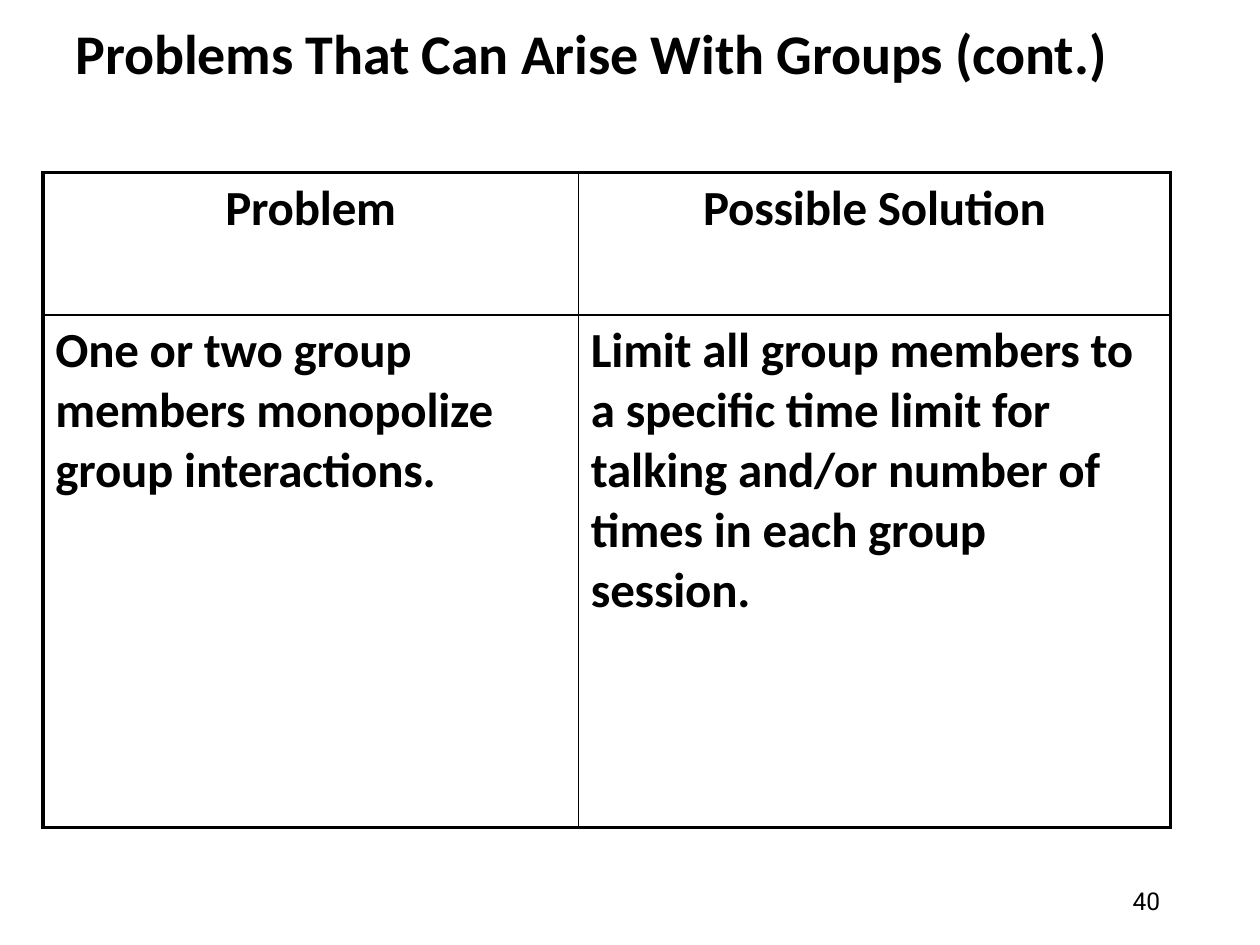
from dataclasses import dataclass

from lxml import etree
from pptx import Presentation
from pptx.dml.color import RGBColor
from pptx.enum import text
from pptx.oxml import ns
from pptx.util import Inches, Pt

COLORS = {"ink": "000000", "paper": "FFFFFF"}
THICK, THIN = 2.25, 1
COLUMN_WIDTHS = (4.25, 4.7)
ROW_HEIGHTS = (1.13, 4.07)


@dataclass
class Style:
    size: float
    font: str = "Calibri"
    bold: bool = True
    tracking: float = 0


@dataclass
class CellText:
    lines: tuple[str, ...]
    centered: bool = False


TITLE = Style(32, tracking=-0.1)
BODY = Style(28, tracking=-0.1)
NUMBER = Style(14, "Roboto", False)

ROWS = (
    (CellText(("Problem",), True), CellText(("Possible Solution",), True)),
    (
        CellText(("One or two group", "members monopolize", "group interactions.")),
        CellText((
            "Limit all group members to",
            "a specific time limit for",
            "talking and/or number of",
            "times in each group",
            "session.",
        )),
    ),
)


def add_run(paragraph, wording: str, style: Style) -> None:
    run = paragraph.add_run()
    run.text = wording
    run.font.size = Pt(style.size)
    run.font.name = style.font
    run.font.bold = style.bold
    run.font.color.rgb = RGBColor.from_string(COLORS["ink"])
    if style.tracking:
        run.font._element.set("spc", str(round(style.tracking * 100)))


def add_label(slide, wording: str, left: float, top: float, width: float,
              height: float, style: Style) -> None:
    shape = slide.shapes.add_textbox(
        Inches(left), Inches(top), Inches(width), Inches(height))
    frame = shape.text_frame
    frame.word_wrap = True
    frame.margin_left = frame.margin_right = 0
    frame.margin_top = frame.margin_bottom = 0
    add_run(frame.paragraphs[0], wording, style)


def set_borders(cell, widths: dict[str, float]) -> None:
    """Draw solid cell edges, given in schema order L, R, T, B."""
    properties = cell._tc.get_or_add_tcPr()
    for index, (side, width) in enumerate(widths.items()):
        line = etree.Element(ns.qn(f"a:ln{side}"), w=str(int(Pt(width))))
        fill = etree.SubElement(line, ns.qn("a:solidFill"))
        etree.SubElement(fill, ns.qn("a:srgbClr"), val=COLORS["ink"])
        properties.insert(index, line)


def fill_cell(cell, content: CellText) -> None:
    cell.fill.solid()
    cell.fill.fore_color.rgb = RGBColor.from_string(COLORS["paper"])
    cell.margin_left = Inches(0 if content.centered else 0.1)
    cell.margin_right = cell.margin_bottom = 0
    cell.margin_top = Inches(0.05)
    paragraph = cell.text_frame.paragraphs[0]
    paragraph.alignment = (text.PP_ALIGN.CENTER if content.centered
                           else text.PP_ALIGN.LEFT)
    for index, line in enumerate(content.lines):
        if index:
            paragraph.add_line_break()
        add_run(paragraph, line, BODY)


def add_problem_table(slide) -> None:
    last_row, last_column = len(ROWS) - 1, len(COLUMN_WIDTHS) - 1
    table = slide.shapes.add_table(
        len(ROWS), len(COLUMN_WIDTHS), Inches(0.34), Inches(1.37),
        Inches(sum(COLUMN_WIDTHS)), Inches(sum(ROW_HEIGHTS))).table
    table.first_row = table.horz_banding = False
    for column, width in zip(table.columns, COLUMN_WIDTHS):
        column.width = Inches(width)
    for row, height in zip(table.rows, ROW_HEIGHTS):
        row.height = Inches(height)
    for r, contents in enumerate(ROWS):
        for c, content in enumerate(contents):
            cell = table.cell(r, c)
            fill_cell(cell, content)
            set_borders(cell, {
                "L": THICK if c == 0 else THIN,
                "R": THICK if c == last_column else THIN,
                "T": THICK if r == 0 else THIN,
                "B": THICK if r == last_row else THIN,
            })


def main() -> None:
    presentation = Presentation()
    presentation.slide_width, presentation.slide_height = Inches(10), Inches(7.5)
    slide = presentation.slides.add_slide(presentation.slide_layouts[6])
    add_label(slide, "40", 8.99, 7.03, 0.3, 0.25, NUMBER)
    add_label(slide, "Problems That Can Arise With Groups (cont.)",
              0.6, 0.15, 8.5, 0.56, TITLE)
    add_problem_table(slide)
    presentation.save("out.pptx")


if __name__ == "__main__":
    main()
